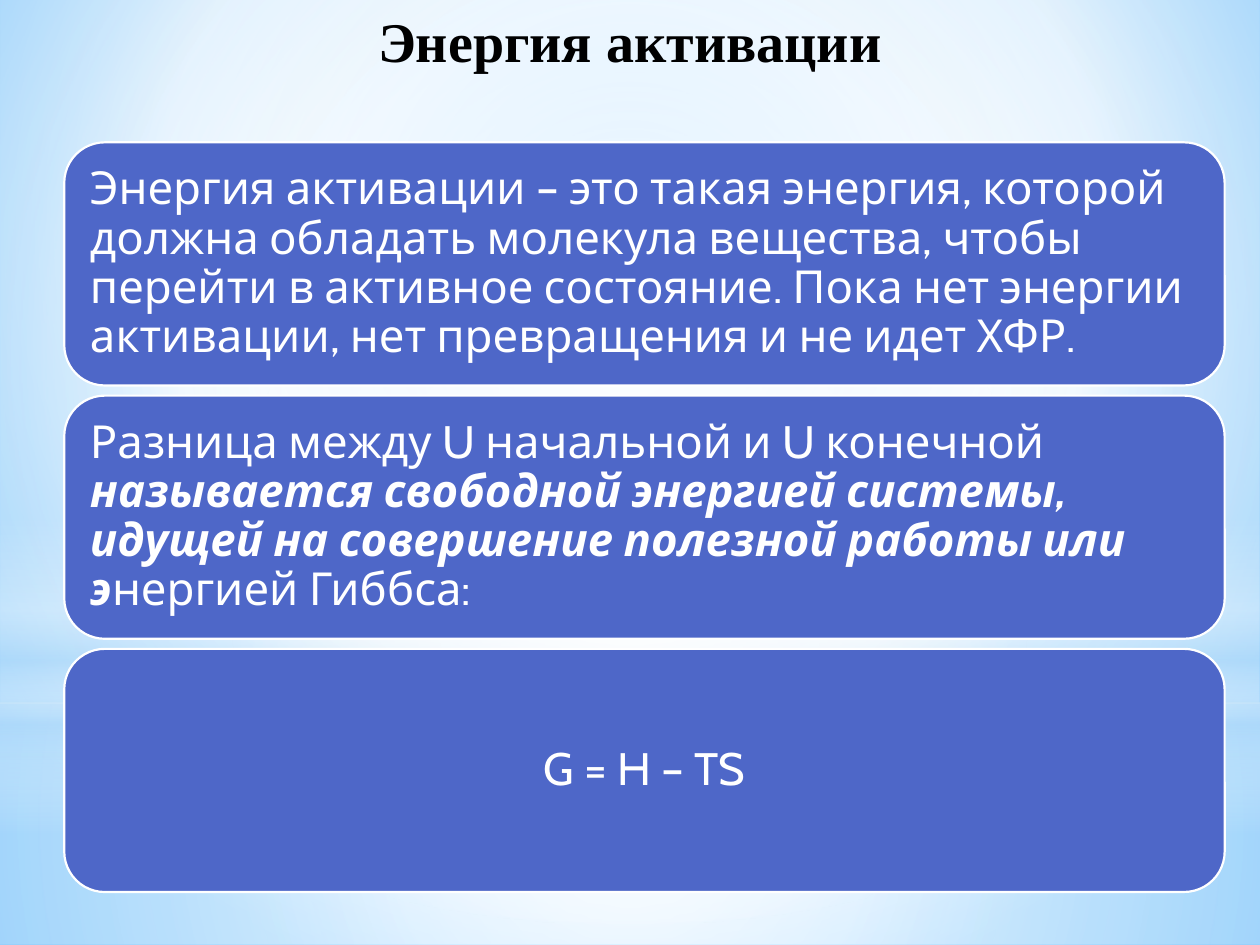
from lxml import etree
from pptx import Presentation
from pptx.dml.color import RGBColor
from pptx.enum.shapes import MSO_SHAPE
from pptx.enum.text import MSO_ANCHOR, PP_ALIGN
from pptx.oxml.ns import qn
from pptx.util import Inches, Pt

RECT, OVAL, ROUNDED = MSO_SHAPE.RECTANGLE, MSO_SHAPE.OVAL, MSO_SHAPE.ROUNDED_RECTANGLE
TOP, MIDDLE = MSO_ANCHOR.TOP, MSO_ANCHOR.MIDDLE
LEFT, CENTER = PP_ALIGN.LEFT, PP_ALIGN.CENTER

WHITE, BLACK, INDIGO, PALE = "FFFFFF", "000000", "4E67C8", "B4DCFA"
MIDPOINT = (50, 50, 50, 50)

# Each panel: alignment and (text, emphasised) runs
PANELS = [
    (LEFT, [("Энергия активации – это такая энергия, которой должна обладать "
             "молекула вещества, чтобы перейти в активное состояние. Пока нет "
             "энергии активации, нет превращения и не идет ХФР.", False)]),
    (LEFT, [("Разница между U начальной и U конечной ", False),
            ("называется свободной энергией системы, идущей на совершение "
             "полезной работы или э", True),
            ("нергией Гиббса:", False)]),
    (CENTER, [("G = H – TS", False)]),
]


def color(hex_string):
    return RGBColor.from_string(hex_string)


def set_gradient(element, stops, center=None):
    """Replace the solid fill in element by (position, colour, opacity) stops.

    The gradient is circular towards center, or vertical without one.
    """
    solid = element.find(".//" + qn("a:solidFill"))
    grad = etree.Element(qn("a:gradFill"), rotWithShape="1")
    stop_list = etree.SubElement(grad, qn("a:gsLst"))
    for position, rgb, opacity in stops:
        stop = etree.SubElement(stop_list, qn("a:gs"), pos=str(position * 1000))
        clr = etree.SubElement(stop, qn("a:srgbClr"), val=rgb)
        if opacity < 100:
            etree.SubElement(clr, qn("a:alpha"), val=str(opacity * 1000))
    if center:
        circle = etree.SubElement(grad, qn("a:path"), path="circle")
        sides = {side: str(v * 1000) for side, v in zip("ltrb", center)}
        etree.SubElement(circle, qn("a:fillToRect"), **sides)
    else:
        etree.SubElement(grad, qn("a:lin"), ang="5400000", scaled="0")
    solid.getparent().replace(solid, grad)


def add_glow(slide, kind, top, height, stops, center=None):
    """Add a full-width, borderless gradient shape."""
    sp = slide.shapes.add_shape(kind, 0, Inches(top), Inches(10), Inches(height))
    sp.shadow.inherit = False
    sp.line.fill.background()
    sp.fill.solid()
    set_gradient(sp._element, stops, center)


def add_backdrop(slide):
    slide.background.fill.solid()
    set_gradient(slide._element,
                 [(0, "9ED5FF", 100), (60, WHITE, 100), (100, "5BB9FF", 100)],
                 (20, 10, 20, 60))
    add_glow(slide, RECT, 5.58, 1.92,
             [(0, WHITE, 91), (37, WHITE, 76), (100, PALE, 79)], MIDPOINT)
    add_glow(slide, RECT, 0, 5.58,
             [(0, WHITE, 89), (48, WHITE, 62), (100, PALE, 79)], MIDPOINT)
    add_glow(slide, RECT, 4.12, 2.5,
             [(0, WHITE, 0), (29, WHITE, 30), (45, PALE, 40),
              (55, WHITE, 26), (65, PALE, 60), (100, WHITE, 0)])
    add_glow(slide, OVAL, 1.75, 5.58, [(0, WHITE, 100), (56, WHITE, 0)], MIDPOINT)


def style_paragraph(p, font, size, rgb, align):
    p.alignment = align
    p.font.name = font
    p.font.size = Pt(size)
    p.font.color.rgb = color(rgb)


def add_title(slide, text):
    tf = slide.shapes.add_textbox(0, 0, Inches(10), Inches(1.25)).text_frame
    tf.word_wrap = True
    tf.vertical_anchor = TOP
    p = tf.paragraphs[0]
    p.text = text
    style_paragraph(p, "Times New Roman", 32, BLACK, CENTER)
    p.font.bold = True


def add_panel(slide, top, align, runs):
    sp = slide.shapes.add_shape(ROUNDED, Inches(0.51), Inches(top),
                                Inches(9.21), Inches(1.93))
    sp.shadow.inherit = False
    sp.fill.solid()
    sp.fill.fore_color.rgb = color(INDIGO)
    sp.line.color.rgb = color(WHITE)
    sp.line.width = Pt(1.25)
    tf = sp.text_frame
    tf.word_wrap = True
    tf.vertical_anchor = MIDDLE
    tf.margin_left = tf.margin_right = tf.margin_top = tf.margin_bottom = Inches(0.11)
    p = tf.paragraphs[0]
    style_paragraph(p, "Cabin", 26, WHITE, align)
    p.line_spacing = 0.9
    for text, emphasised in runs:
        r = p.add_run()
        r.text = text
        if emphasised:
            r.font.bold = r.font.italic = True


def main():
    prs = Presentation()
    prs.slide_width, prs.slide_height = Inches(10), Inches(7.5)
    slide = prs.slides.add_slide(prs.slide_layouts[6])
    add_backdrop(slide)
    add_title(slide, "Энергия активации")
    for i, (align, runs) in enumerate(PANELS):
        add_panel(slide, 1.13 + 2.01 * i, align, runs)
    prs.save("out.pptx")


if __name__ == "__main__":
    main()
